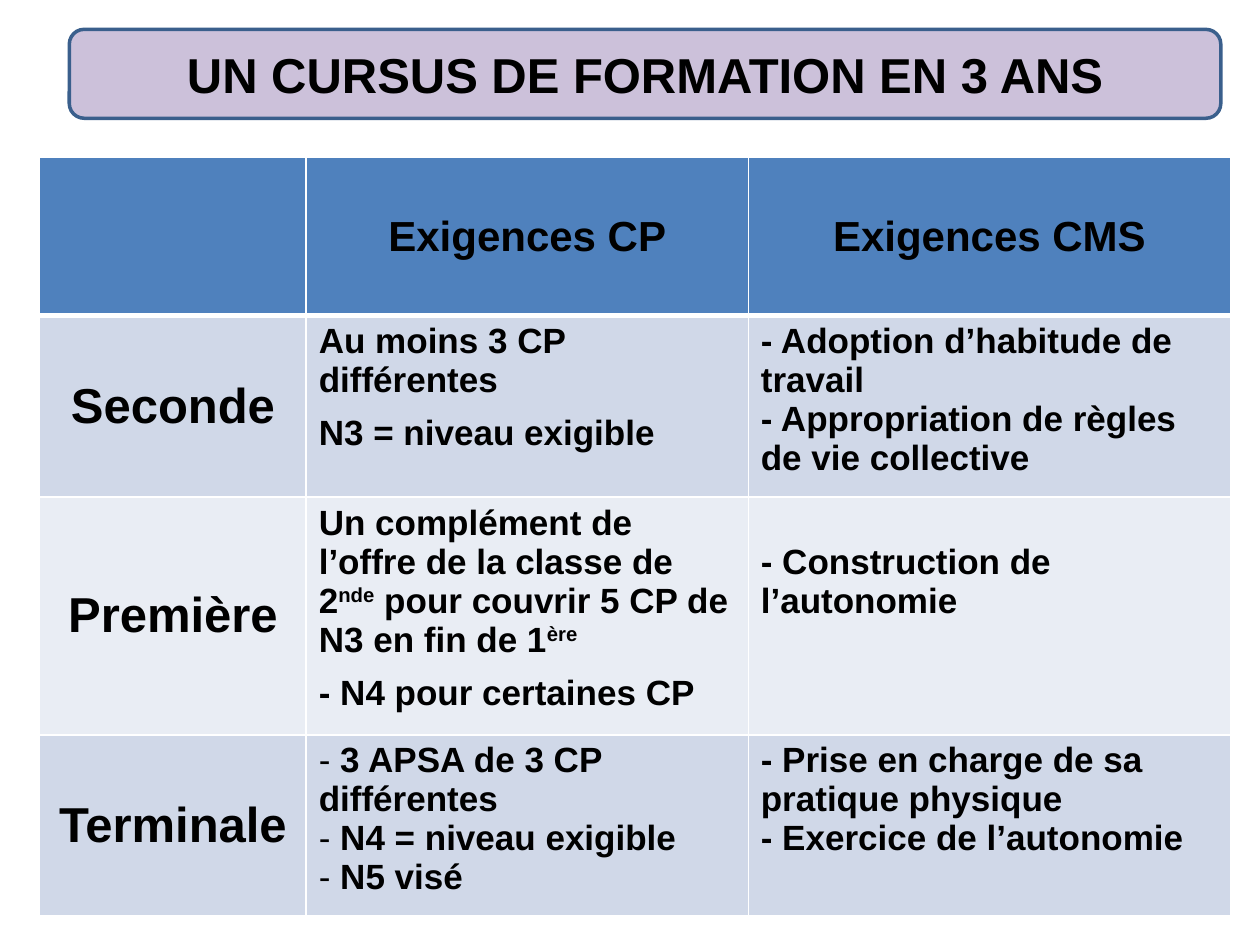
from lxml import etree
from pptx import Presentation
from pptx.dml.color import RGBColor
from pptx.enum.shapes import MSO_SHAPE
from pptx.enum.text import MSO_ANCHOR, PP_ALIGN
from pptx.oxml.ns import qn
from pptx.util import Pt

ROUND = MSO_SHAPE.ROUNDED_RECTANGLE
MIDDLE, TOP = MSO_ANCHOR.MIDDLE, MSO_ANCHOR.TOP
CENTER, LEFT = PP_ALIGN.CENTER, PP_ALIGN.LEFT

FONT = "Arial"
COLORS = {"text": "000000", "title": "CCC1DA", "edge": "3A5F8C", "rule": "FFFFFF",
          "head": "4F81BD", "dark": "D0D8E8", "light": "E9EDF4"}

TITLE = "UN CURSUS DE FORMATION EN 3 ANS"
HEADS = ["", "Exigences CP", "Exigences CMS"]
DASH = ("- ", "plain")
LEVELS = [
    ("Seconde",
     ["Au moins 3 CP différentes", "N3 = niveau exigible"],
     ["- Adoption d’habitude de", "travail",
      "- Appropriation de règles de vie collective"]),
    ("Première",
     [["Un complément de l’offre de la classe de 2", ("nde", "super"),
       " pour couvrir 5 CP de N3 en fin de 1", ("ère", "super")],
      "- N4 pour certaines CP"],
     ["- Construction de l’autonomie"]),
    ("Terminale",
     [[DASH, "3 APSA de 3 CP différentes"], [DASH, "N4 = niveau exigible"],
      [DASH, "N5 visé"]],
     ["- Prise en charge de sa", "pratique physique",
      "- Exercice de l’autonomie"]),
]
GAPS = {(1, 1): 8, (2, 1): 8}
DROPS = {(2, 2): 26}
COLS = [152.4, 252.6, 275.6]
ROWS = [90.4, 103.7, 135.8, 103.7]


def color(name):
    return RGBColor.from_string(COLORS[name])


def paint(shape, name):
    shape.fill.solid()
    shape.fill.fore_color.rgb = color(name)


def write(frame, lines, size, align, gap=0):
    for i, line in enumerate(lines):
        para = frame.paragraphs[0] if i == 0 else frame.add_paragraph()
        para.alignment = align
        para.space_before = Pt(gap if i else 0)
        font = para.font
        font.name, font.size, font.bold = FONT, Pt(size), True
        font.color.rgb = color("text")
        for part in [line] if isinstance(line, str) else line:
            text, style = (part, "") if isinstance(part, str) else part
            run = para.add_run()
            run.text = text
            if style == "plain":
                run.font.bold = False
            elif style == "super":
                run.font._element.set("baseline", "30000")


def border(cell, row):
    props = cell._tc.get_or_add_tcPr()
    widths = {"L": 1, "R": 1, "T": 3 if row == 1 else 1, "B": 3 if row == 0 else 1}
    for i, (side, width) in enumerate(widths.items()):
        line = etree.Element(qn(f"a:ln{side}"), w=str(int(Pt(width))))
        fill = etree.SubElement(line, qn("a:solidFill"))
        etree.SubElement(fill, qn("a:srgbClr"), val=COLORS["rule"])
        props.insert(i, line)


def add_title(slide):
    box = slide.shapes.add_shape(ROUND, Pt(39.6), Pt(16.8), Pt(658), Pt(50.8))
    box.shadow.inherit = False
    paint(box, "title")
    box.line.color.rgb = color("edge")
    box.line.width = Pt(2)
    box.text_frame.vertical_anchor = MIDDLE
    write(box.text_frame, [TITLE], 28, CENTER)


def add_grid(slide):
    grid = slide.shapes.add_table(len(ROWS), len(COLS), Pt(22.6), Pt(90),
                                  Pt(sum(COLS)), Pt(sum(ROWS))).table
    for col, width in zip(grid.columns, COLS):
        col.width = Pt(width)
    for row, height in zip(grid.rows, ROWS):
        row.height = Pt(height)
    cells = [[[head] for head in HEADS]]
    cells += [[[name], needs, skills] for name, needs, skills in LEVELS]
    for r, row in enumerate(cells):
        for c, lines in enumerate(row):
            cell = grid.cell(r, c)
            title = r == 0 or c == 0
            size = 24 if r == 0 else 28 if c == 0 else 20
            cell.vertical_anchor = MIDDLE if title else TOP
            if (r, c) in DROPS:
                cell.margin_top = Pt(DROPS[r, c])
            if lines != [""]:
                write(cell.text_frame, lines, size, CENTER if title else LEFT,
                      GAPS.get((r, c), 0))
            paint(cell, "head" if r == 0 else "dark" if r % 2 else "light")
            border(cell, r)


def main():
    deck = Presentation()
    deck.slide_width, deck.slide_height = Pt(720), Pt(540)
    slide = deck.slides.add_slide(deck.slide_layouts[6])
    add_title(slide)
    add_grid(slide)
    deck.save("out.pptx")


if __name__ == "__main__":
    main()
